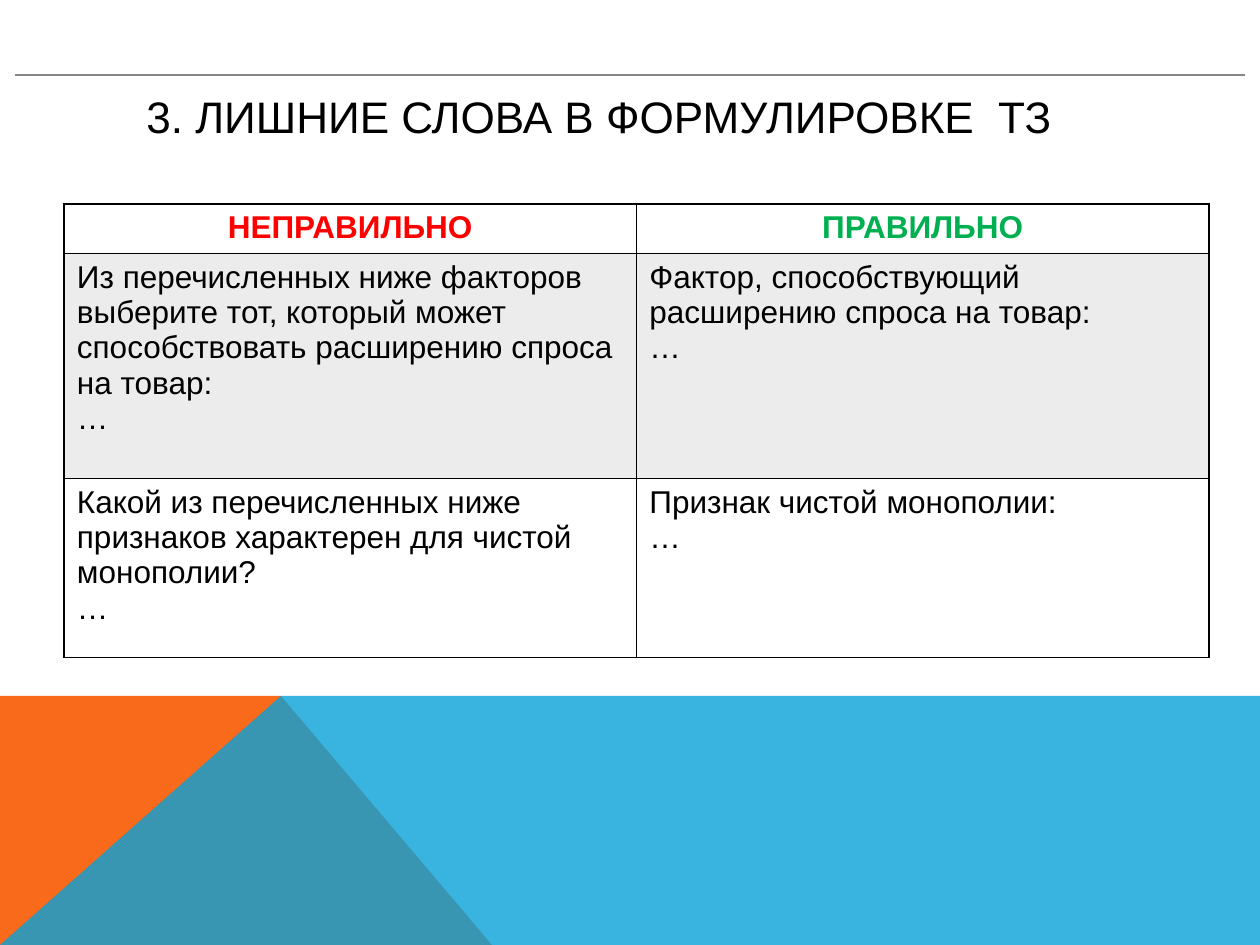
"""Build the slide comparing wrong and right wording of test items."""
import pptx
import pptx.dml.color
import pptx.enum.shapes
import pptx.enum.text
import pptx.oxml
import pptx.oxml.ns
import pptx.util
from lxml import etree

SCALE = 914400 / 126
FONT = "Arial"


def px(length):
    return pptx.util.Emu(round(length * SCALE))


def color(value):
    return pptx.dml.color.RGBColor.from_string(value)


deck = pptx.Presentation()
deck.slide_width, deck.slide_height = px(1260), px(945)
slide = deck.slides.add_slide(deck.slide_layouts[6])

bands = [
    ("F96A1B", 100, [(0, 945), (0, 696), (281, 696), (492, 945)]),
    ("08A1D9", 80, [(0, 945), (281, 696), (1260, 696), (1260, 945)]),
]
for fill, opacity, corners in bands:
    outline = slide.shapes.build_freeform(*corners[0], scale=SCALE)
    outline.add_line_segments(corners[1:], close=True)
    band = outline.convert_to_shape()
    band.shadow.inherit = False
    band.fill.solid()
    band.fill.fore_color.rgb = color(fill)
    band.line.fill.background()
    if opacity < 100:
        tint = band.fill._xPr.find(".//" + pptx.oxml.ns.qn("a:srgbClr"))
        etree.SubElement(tint, pptx.oxml.ns.qn("a:alpha"), val=str(opacity * 1000))

rule = slide.shapes.add_connector(
    pptx.enum.shapes.MSO_CONNECTOR.STRAIGHT, px(15), px(75), px(1245), px(75))
rule.line.color.rgb = color("868686")
rule.line.width = pptx.util.Pt(0.75)
etree.SubElement(rule._element.spPr, pptx.oxml.ns.qn("a:effectLst"))

title = slide.shapes.add_textbox(px(134), px(76), px(984), px(79)).text_frame
title.word_wrap = True
title.vertical_anchor = pptx.enum.text.MSO_ANCHOR.MIDDLE
heading = title.paragraphs[0]
heading.text = "3. ЛИШНИЕ СЛОВА В ФОРМУЛИРОВКЕ  ТЗ"
heading.font.name = FONT
heading.font.size = pptx.util.Pt(25.2)
heading.font.color.rgb = color("000000")

wordings = [
    ("НЕПРАВИЛЬНО", "ПРАВИЛЬНО"),
    ("Из перечисленных ниже факторов выберите тот, который может "
     "способствовать расширению спроса на товар:\n…",
     "Фактор, способствующий расширению спроса на товар:\n…"),
    ("Какой из перечисленных ниже признаков характерен для чистой монополии?\n…",
     "Признак чистой монополии:\n…"),
]
row_heights = [48, 225, 179]
row_fills = ["FFFFFF", "ECECEC", "FFFFFF"]
header_colors = ["FF0000", "00B050"]

comparison = slide.shapes.add_table(
    3, 2, px(64), px(204), px(1145), px(sum(row_heights))).table
comparison.first_row = comparison.horz_banding = False
for column in comparison.columns:
    column.width = px(572.5)

for r, wording_pair in enumerate(wordings):
    comparison.rows[r].height = px(row_heights[r])
    for c, wording in enumerate(wording_pair):
        cell = comparison.cell(r, c)
        cell.text = wording
        cell.margin_left = cell.margin_right = px(13)
        cell.margin_top = cell.margin_bottom = px(6)
        cell.fill.solid()
        cell.fill.fore_color.rgb = color(row_fills[r])
        for paragraph in cell.text_frame.paragraphs:
            paragraph.font.name = FONT
            paragraph.font.size = pptx.util.Pt(18)
            paragraph.font.bold = r == 0
            paragraph.font.color.rgb = color("000000" if r else header_colors[c])
            if r == 0:
                paragraph.alignment = pptx.enum.text.PP_ALIGN.CENTER
        for position, side in enumerate(["lnL", "lnR", "lnT", "lnB"]):
            border = pptx.oxml.parse_xml(
                f'<a:{side} {pptx.oxml.ns.nsdecls("a")} w="12700"><a:solidFill>'
                f'<a:srgbClr val="000000"/></a:solidFill></a:{side}>')
            cell._tc.get_or_add_tcPr().insert(position, border)

deck.save("out.pptx")
